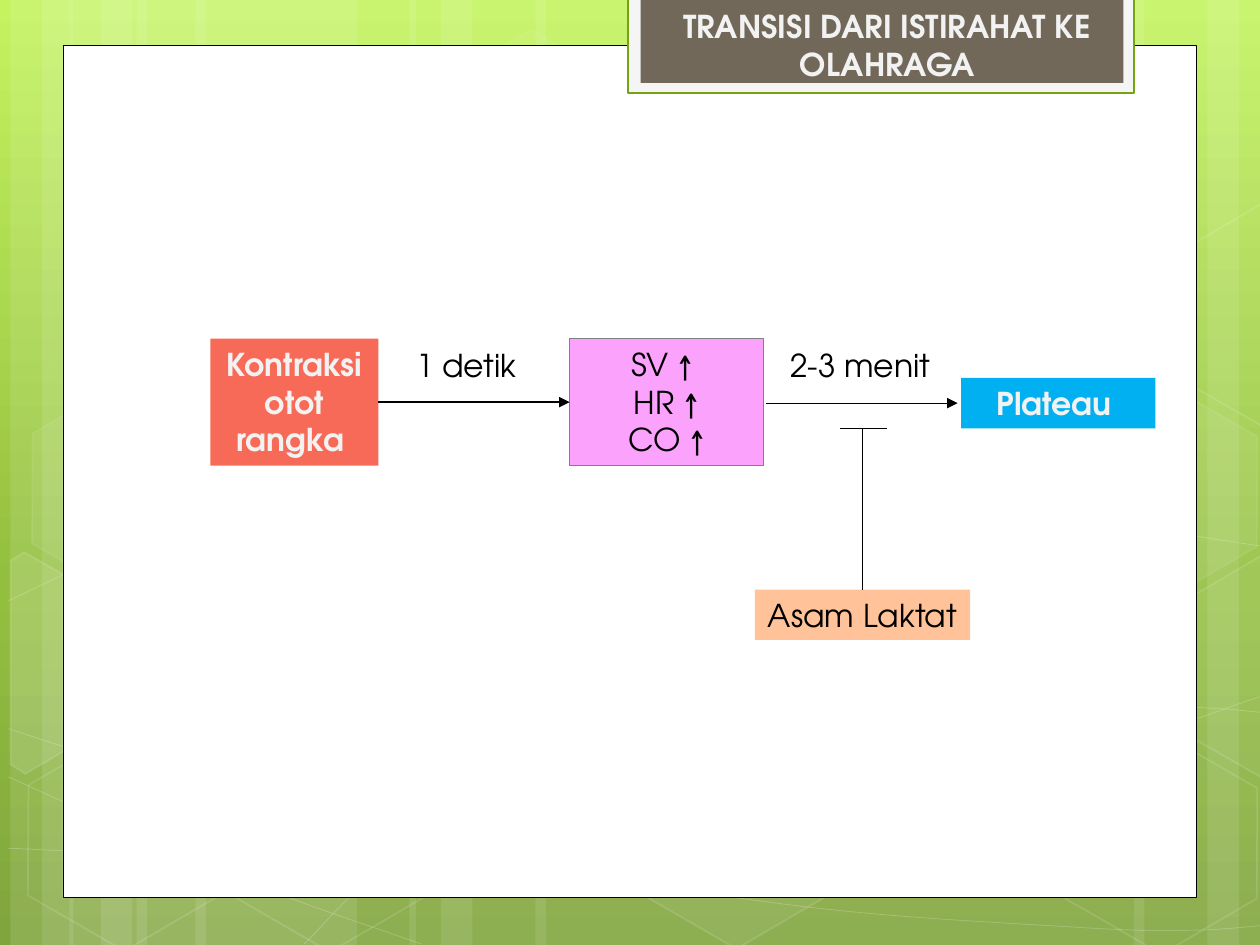
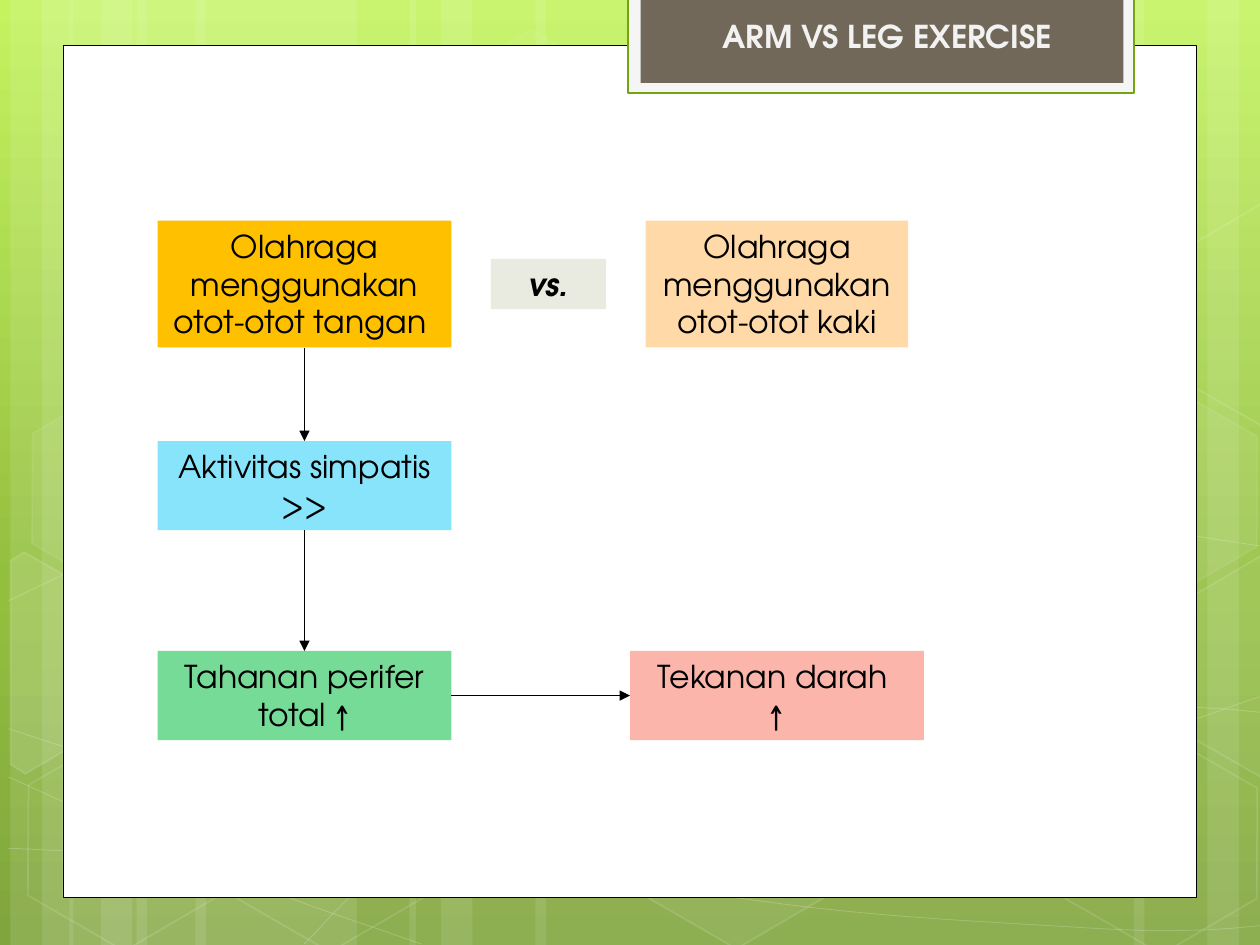
from copy import deepcopy
from math import cos, radians, sin

from lxml.etree import SubElement
from pptx import Presentation
from pptx.dml.color import RGBColor
from pptx.enum.shapes import MSO_CONNECTOR as Connector, MSO_SHAPE as Shape
from pptx.enum.text import MSO_ANCHOR as Anchor, MSO_AUTO_SIZE as AutoSize, PP_ALIGN as Align
from pptx.oxml.ns import qn
from pptx.util import Inches, Pt

# The slide is a grid of 120 columns by 90 rows; each cell is 1/12 inch.
COLUMNS, ROWS = 120, 90
LINE_ROWS = 4.8  # height of a box with one line of text
TILT = 30  # degrees, for the hexagons and their slices

FONT = "TeX Gyre Adventor"
WHITE = RGBColor(0xFF, 0xFF, 0xFF)
BLACK = RGBColor(0x00, 0x00, 0x00)
PALE = RGBColor(0xF2, 0xF2, 0xF2)
TAB_RIM = RGBColor(0xF5, 0xF5, 0xF5)
TAB_EDGE = RGBColor(0x74, 0xA5, 0x10)
TAB = RGBColor(0x71, 0x68, 0x5A)
GREY = RGBColor(0x80, 0x80, 0x80)
CORAL = RGBColor(0xF7, 0x6A, 0x57)
PINK = RGBColor(0xFA, 0xA2, 0xFC)
BLUE = RGBColor(0x00, 0xB0, 0xF0)
PEACH = RGBColor(0xFF, 0xC2, 0x99)
AMBER = RGBColor(0xFF, 0xC0, 0x00)
SAND = RGBColor(0xFF, 0xD9, 0xA7)
SKY = RGBColor(0x88, 0xE4, 0xFA)
MINT = RGBColor(0x77, 0xDB, 0x98)
ROSE = RGBColor(0xFB, 0xB5, 0xAB)
STONE = RGBColor(0xE9, 0xEA, 0xE0)
BACKDROP = [
    (0, RGBColor(0xC3, 0xF3, 0x5F)),
    (0.62, RGBColor(0x93, 0xBF, 0x3F)),
    (1, RGBColor(0x81, 0xA5, 0x3E)),
]

# Light bands: left column and width
BANDS = [(start + shift, width) for start in (1, 6.6)
         for shift, width in ((12, 21), (0, 6), (3, 10))]
BANDS += [(88, 21), (115, 6), (108, 10), (51, 37), (39, 6), (42, 10)]

WAVES = [
    [(0.8, 80.8), (22.8, 81.4), (55, 79.8), (95, 74), (120.8, 66.1)],
    [(0.8, 57.2), (14.5, 51.7), (41.6, 46.4), (78.5, 46.4), (120.8, 52.1)],
    [(0.8, 74), (22, 83.4), (40.1, 89.9)],
    [(0.8, 69.4), (15.4, 73.9), (42.8, 80.8), (75.4, 86.2), (102.4, 88.3),
     (113.4, 88.6), (120.8, 88.1)],
    [(29, 89.9), (36.2, 82.9), (46.6, 76.7), (56.4, 73.1), (73, 69.4),
     (81.6, 68.3), (95.3, 67.4), (106.3, 67.4), (114.4, 67.4), (120.7, 67.9)],
]

# Hexagons: left, top, fill opacity, line opacity (percent)
HEXAGONS = [
    (40.1, 4.3, 4, 8), (59.6, 70.7, 6, 12), (1.3, 70.9, 0, 12), (1.7, 37.4, 7, 8),
    (20.9, 71, 0, 12), (90.4, 54.4, 10, 12), (100.1, 71.2, 0, 12), (100.1, 37.7, 7, 8),
]
# Hexagons cut by the slide's edge: corners around a center
LEFT_SLICE = [(-3.3, -10.8), (-2, -11.6), (7.2, -6.4), (7.1, 4.2), (-1.9, 9.5), (-3.3, 8.6)]
RIGHT_SLICE = [(-7.1, -4.2), (1.9, -9.5), (2.9, -8.9), (2.8, 11.2), (2, 11.6), (-7.1, 6.4)]
# Slices: corners, center, fill opacity
SLICES = [
    (LEFT_SLICE, (4.3, 64.2), 10),
    (RIGHT_SLICE, (118.2, 62.4), 4),
    (RIGHT_SLICE, (118.2, 28.9), 0),
]


def cells(*counts):
    return [Inches(count / 12) for count in counts]


def set_backdrop(master):
    fill = master.background.fill
    fill.gradient()
    fill.gradient_angle = 270
    stop_list = master.element.find(".//" + qn("a:gsLst"))
    stop_list.append(deepcopy(stop_list[-1]))
    for stop, (position, color) in zip(fill.gradient_stops, BACKDROP):
        stop.position = position
        stop.color.rgb = color


def paint(shape, fill=None, edge=None, weight=0.75):
    shape.shadow.inherit = False
    if fill is None:
        shape.fill.background()
    else:
        shape.fill.solid()
        shape.fill.fore_color.rgb = fill
    if edge is None:
        shape.line.fill.background()
    else:
        shape.line.color.rgb = edge
        shape.line.width = Pt(weight)


def veil(shape, fill_percent, line_percent, weight=1):
    """Paint a shape in see-through white."""
    paint(shape, WHITE if fill_percent else None, WHITE if line_percent else None, weight)
    for place, percent in (("", fill_percent), (qn("a:ln") + "/", line_percent)):
        if percent:
            color = shape.element.spPr.find(place + qn("a:solidFill") + "/" + qn("a:srgbClr"))
            SubElement(color, qn("a:alpha")).set("val", str(percent * 1000))


def add_rectangle(page, area, fill, edge=None, weight=0.75):
    shape = page.shapes.add_shape(Shape.RECTANGLE, *cells(*area))
    paint(shape, fill, edge, weight)
    return shape


def add_outline(page, points, close=False):
    start, *rest = [cells(*point) for point in points]
    builder = page.shapes.build_freeform(*start)
    builder.add_line_segments(rest, close=close)
    return builder.convert_to_shape()


def add_wave(page, points):
    """Draw a smooth curve, with Bezier handles worked out from the neighbours."""
    padded = [points[0], *points, points[-1]]
    handles = [points[0]]
    for before, start, end, after in zip(padded, padded[1:], padded[2:], padded[3:]):
        handles.append([b + (c - a) / 6 for a, b, c in zip(before, start, end)])
        handles.append([c - (d - b) / 6 for b, c, d in zip(start, end, after)])
        handles.append(end)
    wave = add_outline(page, handles)
    outline = wave.element.find(".//" + qn("a:moveTo")).getparent()
    segments = outline.findall(qn("a:lnTo"))
    for first in range(0, len(segments), 3):
        curve = SubElement(outline, qn("a:cubicBezTo"))
        for segment in segments[first:first + 3]:
            curve.append(segment[0])
            outline.remove(segment)
    return wave


def add_slice(page, corners, center):
    """Draw the corners upright, then tilt the shape into place."""
    across, down = cos(radians(TILT)), sin(radians(TILT))
    upright = [(center[0] + x * across + y * down, center[1] - x * down + y * across)
               for x, y in corners]
    piece = add_outline(page, upright, close=True)
    piece.rotation = TILT
    return piece


def write(frame, text, color=BLACK, bold=False, italic=False, align=Align.CENTER, wrap=True):
    frame.text = text
    frame.word_wrap = wrap
    frame.auto_size = AutoSize.NONE
    frame.vertical_anchor = Anchor.TOP
    for para in frame.paragraphs:
        para.alignment = align
        for span in para.runs:
            font = span.font
            font.name, font.size, font.color.rgb = FONT, Pt(18), color
            font.bold, font.italic = bold, italic


def add_box(page, area, text, fill, edge=None, **style):
    box = add_rectangle(page, area, fill, edge)
    write(box.text_frame, text, wrap=area[3] > LINE_ROWS, **style)


def add_label(page, left, top, width, text):
    label = page.shapes.add_textbox(*cells(left, top, width, LINE_ROWS))
    write(label.text_frame, text, align=Align.LEFT)


def add_line(page, start, end, arrow=True):
    line = page.shapes.add_connector(Connector.STRAIGHT, *cells(*start, *end))
    line.line.color.rgb = BLACK
    line.line.width = Pt(0.75)
    if arrow:
        SubElement(line.element.spPr.find(qn("a:ln")), qn("a:tailEnd")).set("type", "triangle")
    SubElement(line.element.spPr, qn("a:effectLst"))


def draw_scenery(page):
    for left, width in BANDS:
        band = page.shapes.add_shape(Shape.RECTANGLE, *cells(left, 0, width, ROWS))
        veil(band, 10, 0)
    for points in WAVES:
        veil(add_wave(page, points), 0, 20, 0.5)
    for left, top, fill_percent, line_percent in HEXAGONS:
        hexagon = page.shapes.add_shape(Shape.HEXAGON, *cells(left, top, 21, 18.25))
        hexagon.adjustments[0] = 0.285
        hexagon.rotation = TILT
        veil(hexagon, fill_percent, line_percent)
    for corners, center, fill_percent in SLICES:
        veil(add_slice(page, corners, center), fill_percent, 12)
    add_rectangle(page, (6, 4.3, COLUMNS - 12, 81.2), WHITE, BLACK, 0.5)
    add_rectangle(page, (59.85, -0.2, 48.2, 9.1), TAB_RIM, TAB_EDGE, 1.25)
    add_rectangle(page, (61, -0.2, 46, 8.1), TAB)


def furnish_layout(page):
    """Draw the scenery with the page's tools and hand it to the page's layout."""
    layout = page.slide_layout
    for holder in list(layout.placeholders)[1:]:
        layout.shapes.element.remove(holder.element)
    draw_scenery(page)
    for shape in list(page.shapes)[1:]:
        layout.shapes.element.append(shape.element)


def add_page(deck, title, title_top, title_rows):
    page = deck.slides.add_slide(deck.slide_layouts[5])
    heading = page.shapes.title
    heading.left, heading.top, heading.width, heading.height = cells(
        62.5, title_top, 44, title_rows)
    write(heading.text_frame, title, PALE, bold=True)
    return page


def draw_transition(page):
    top, rows, middle = 32.25, 12.1, 38.3
    add_box(page, (20.04, top, 16, rows), "Kontraksi otot rangka ", CORAL, color=PALE, bold=True)
    add_box(page, (71.9, 56.15, 20.5, LINE_ROWS), "Asam Laktat", PEACH)
    add_box(page, (91.55, 36, 18.5, LINE_ROWS), "Plateau ", BLUE, color=PALE, bold=True)
    add_box(page, (54.25, top, 18.5, rows), "SV ↑ \nHR ↑\nCO ↑", PINK, GREY)
    add_label(page, 38.45, 32.4, 12.8, "1 detik")
    add_label(page, 74.1, 32.4, 16.1, "2-3 menit")
    add_line(page, (36, middle), (54.25, middle))
    add_line(page, (73, middle + 0.1), (91.2, middle + 0.1))
    # Blocking mark from lactic acid towards the second arrow
    add_line(page, (82.15, 56.15), (82.15, 40.8), arrow=False)
    add_line(page, (80, 40.8), (84.5, 40.8), arrow=False)


def draw_comparison(page):
    left, right, width = 15, 60, 28
    tall, low = 12.1, 8.5
    first, second, third = 21, 42, 62
    center, last_middle = left + width / 2, third + low / 2
    add_box(page, (left, first, width, tall), "Olahraga menggunakan otot-otot tangan ", AMBER)
    add_box(page, (right + 1.5, first, width - 3, tall),
            "Olahraga menggunakan otot-otot kaki", SAND)
    add_box(page, (left, second, width, low), "Aktivitas simpatis >>", SKY)
    add_box(page, (left, third, width, low), "Tahanan perifer total ↑", MINT)
    add_box(page, (right, third, width, low), "Tekanan darah \n↑", ROSE)
    add_line(page, (center, first + tall), (center, second))
    add_line(page, (center, second + low), (center, third))
    add_line(page, (left + width, last_middle), (right, last_middle))
    add_box(page, (46.75, 24.65, 11, LINE_ROWS), "vs.", STONE, bold=True, italic=True)


def main():
    deck = Presentation()
    deck.slide_width, deck.slide_height = cells(COLUMNS, ROWS)
    set_backdrop(deck.slide_master)
    transition = add_page(deck, "TRANSISI DARI ISTIRAHAT KE OLAHRAGA", 0.1, 8.5)
    furnish_layout(transition)
    draw_transition(transition)
    draw_comparison(add_page(deck, "ARM VS LEG EXERCISE", 1, LINE_ROWS))
    deck.save("out.pptx")


if __name__ == "__main__":
    main()
